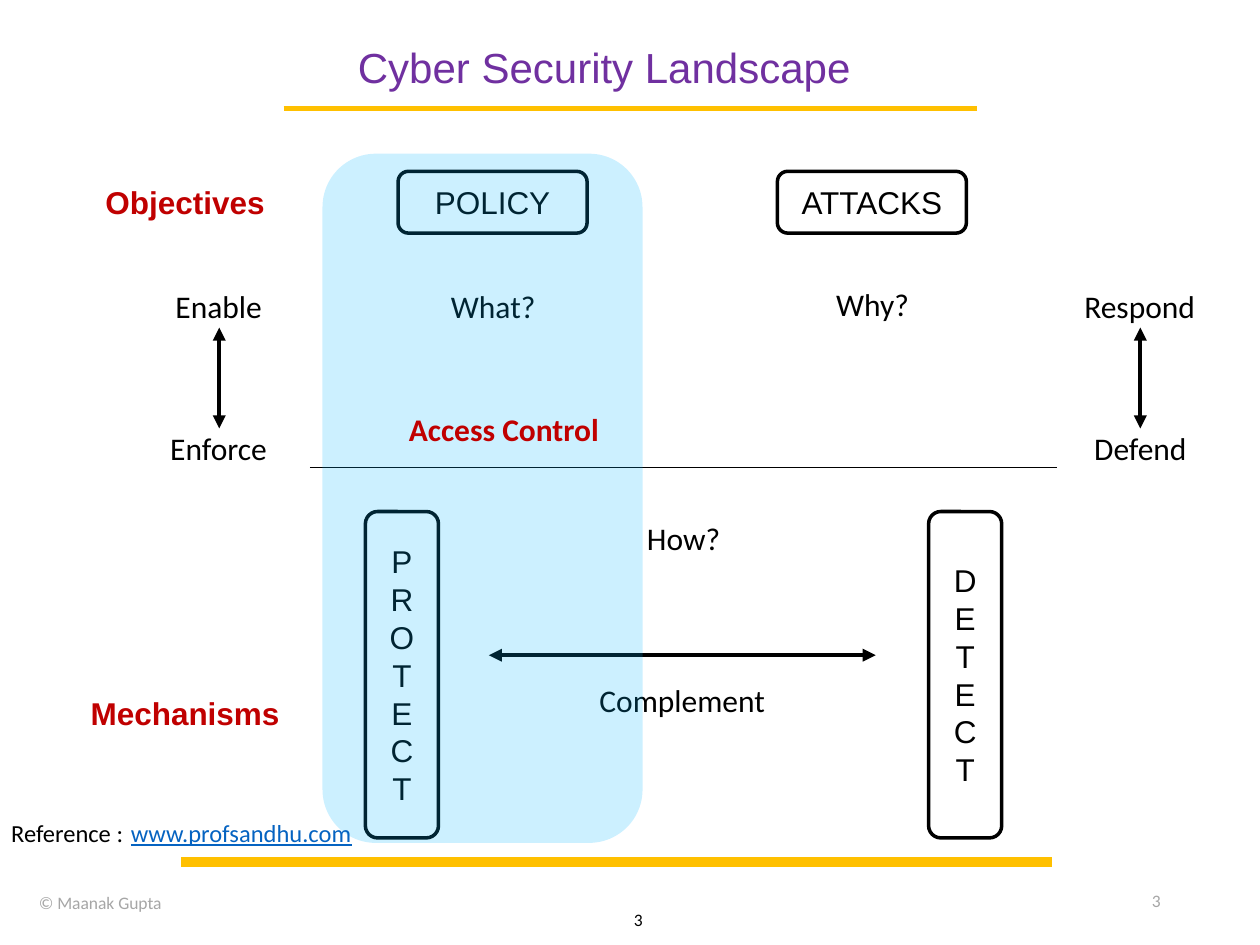
from lxml.etree import SubElement
from pptx import Presentation
from pptx.dml.color import RGBColor
from pptx.enum.shapes import MSO_CONNECTOR, MSO_SHAPE
from pptx.enum.text import MSO_ANCHOR as Anchor, PP_ALIGN as Align
from pptx.oxml.ns import qn
from pptx.util import Inches, Pt

COLORS = {
    "black": "000000",
    "white": "FFFFFF",
    "gold": "FFC000",
    "gray": "A6A6A6",
    "red": "C00000",
    "purple": "7030A0",
    "link": "0563C1",
    "highlight": "00B8FF",
}
LABEL = {"name": "Calibri", "size": Pt(18)}
BOX = {"name": "Arial", "size": Pt(18)}
HEADING = {**BOX, "bold": True}
SMALL = {"name": "Calibri", "size": Pt(10)}
REFERENCE = {"name": "Calibri", "size": Pt(14)}


def rgb(color):
    return RGBColor.from_string(COLORS[color])


def set_text(shape, text, font, color="black", align=Align.CENTER, anchor=Anchor.MIDDLE, wrap=False):
    frame = shape.text_frame
    frame.word_wrap = wrap
    frame.vertical_anchor = anchor
    paragraph = frame.paragraphs[0]
    paragraph.alignment = align
    run = paragraph.add_run()
    run.text = text
    for name, value in font.items():
        setattr(run.font, name, value)
    run.font.color.rgb = rgb(color)


def add_label(slide, text, left, top, width, height=0.4, font=LABEL, **options):
    shape = slide.shapes.add_textbox(Inches(left), Inches(top), Inches(width), Inches(height))
    set_text(shape, text, font, **{"anchor": Anchor.TOP, **options})


def add_rounded(slide, left, top, width, height, fill=None, line=None):
    shape = slide.shapes.add_shape(
        MSO_SHAPE.ROUNDED_RECTANGLE, Inches(left), Inches(top), Inches(width), Inches(height)
    )
    shape.shadow.inherit = False
    if fill:
        shape.fill.solid()
        shape.fill.fore_color.rgb = rgb(fill)
    else:
        shape.fill.background()
    if line:
        shape.line.color.rgb = rgb(line)
        shape.line.width = Pt(2)
    else:
        shape.line.fill.background()
    return shape


def add_line(slide, start, end, width, color="black", arrows=False):
    line = slide.shapes.add_connector(MSO_CONNECTOR.STRAIGHT, *map(Inches, start + end))
    line.line.color.rgb = rgb(color)
    line.line.width = Pt(width)
    if arrows:
        outline = line.line._get_or_add_ln()
        for tag in ("a:headEnd", "a:tailEnd"):
            SubElement(outline, qn(tag), type="triangle")
    SubElement(line._element.spPr, qn("a:effectLst"))


def add_title(slide, text):
    title = slide.shapes.title
    title.left, title.top, title.width, title.height = map(Inches, (2.17, 0.3, 5.25, 0.51))
    for side in ("left", "top", "right", "bottom"):
        setattr(title.text_frame, f"margin_{side}", 0)
    set_text(title, text, {"name": "Arial", "size": Pt(24)}, "purple", wrap=True)
    title.text_frame.paragraphs[0].line_spacing = 0.9


def add_frame(slide):
    add_line(slide, (1.44, 6.84), (8.35, 6.84), 6, "gold")
    add_line(slide, (2.25, 0.86), (7.75, 0.86), 3, "gold")
    add_label(slide, "© Maanak Gupta", 0.21, 7.03, 1.86, 0.27, SMALL,
              color="gray", align=Align.LEFT, wrap=True)
    for left, top, width, color in ((4.8, 7.1, 0.4, "black"), (7.06, 6.95, 2.25, "gray")):
        add_label(slide, "3", left, top, width, font=SMALL, color=color,
                  align=Align.RIGHT, anchor=Anchor.MIDDLE, wrap=True)


def add_boxes(slide):
    for text, left in (("PROTECT", 2.9), ("DETECT", 7.37)):
        box = add_rounded(slide, left, 4.06, 0.58, 2.59, "white", "black")
        set_text(box, text, BOX)
        box.text_frame._txBody.bodyPr.set("vert", "wordArtVert")
    for text, left in (("POLICY", 3.16), ("ATTACKS", 6.17)):
        set_text(add_rounded(slide, left, 1.36, 1.5, 0.49, "white", "black"), text, BOX)
    for text, top in (("Objectives", 1.36), ("Mechanisms", 5.41)):
        set_text(add_rounded(slide, 0.72, top, 1.5, 0.49, "white"), text, HEADING, "red")


def add_relations(slide):
    add_line(slide, (2.46, 3.71), (8.39, 3.71), 0.75)
    add_line(slide, (3.88, 5.2), (6.95, 5.2), 2.5, arrows=True)
    for center in (1.74, 9.05):
        add_line(slide, (center, 3.4), (center, 2.6), 2.5, arrows=True)
    for text, left, top, width in (
        ("What?", 3.45, 2.23, 0.93),
        ("Why?", 6.5, 2.21, 0.85),
        ("How?", 5, 4.07, 0.85),
        ("Complement", 4.6, 5.36, 1.63),
        ("Enable", 1.24, 2.23, 0.99),
        ("Enforce", 1.2, 3.36, 1.07),
        ("Respond", 8.44, 2.23, 1.21),
        ("Defend", 8.54, 3.36, 1.02),
    ):
        add_label(slide, text, left, top, width)


def add_access_control(slide):
    highlight = add_rounded(slide, 2.56, 1.22, 2.54, 5.47, "highlight")
    color = highlight._element.spPr.find(qn("a:solidFill"))[0]
    SubElement(color, qn("a:alpha"), val="20000")
    caption = add_rounded(slide, 2.9, 3.18, 2.2, 0.52)
    set_text(caption, "Access Control", {**LABEL, "bold": True}, "red", anchor=Anchor.TOP, wrap=True)


def add_reference(slide):
    add_label(slide, "www.profsandhu.com", 0.94, 6.44, 1.96, 0.34,
              {**REFERENCE, "underline": True}, color="link", align=Align.LEFT, wrap=True)
    add_label(slide, "Reference :", -0.01, 6.44, 1.1, 0.34, REFERENCE, align=Align.LEFT, wrap=True)


def main():
    presentation = Presentation()
    presentation.slide_width = Inches(10)
    presentation.slide_height = Inches(7.5)
    slide = presentation.slides.add_slide(presentation.slide_layouts[5])
    add_title(slide, "Cyber Security Landscape")
    add_frame(slide)
    add_boxes(slide)
    add_relations(slide)
    add_access_control(slide)
    add_reference(slide)
    presentation.save("out.pptx")


if __name__ == "__main__":
    main()
